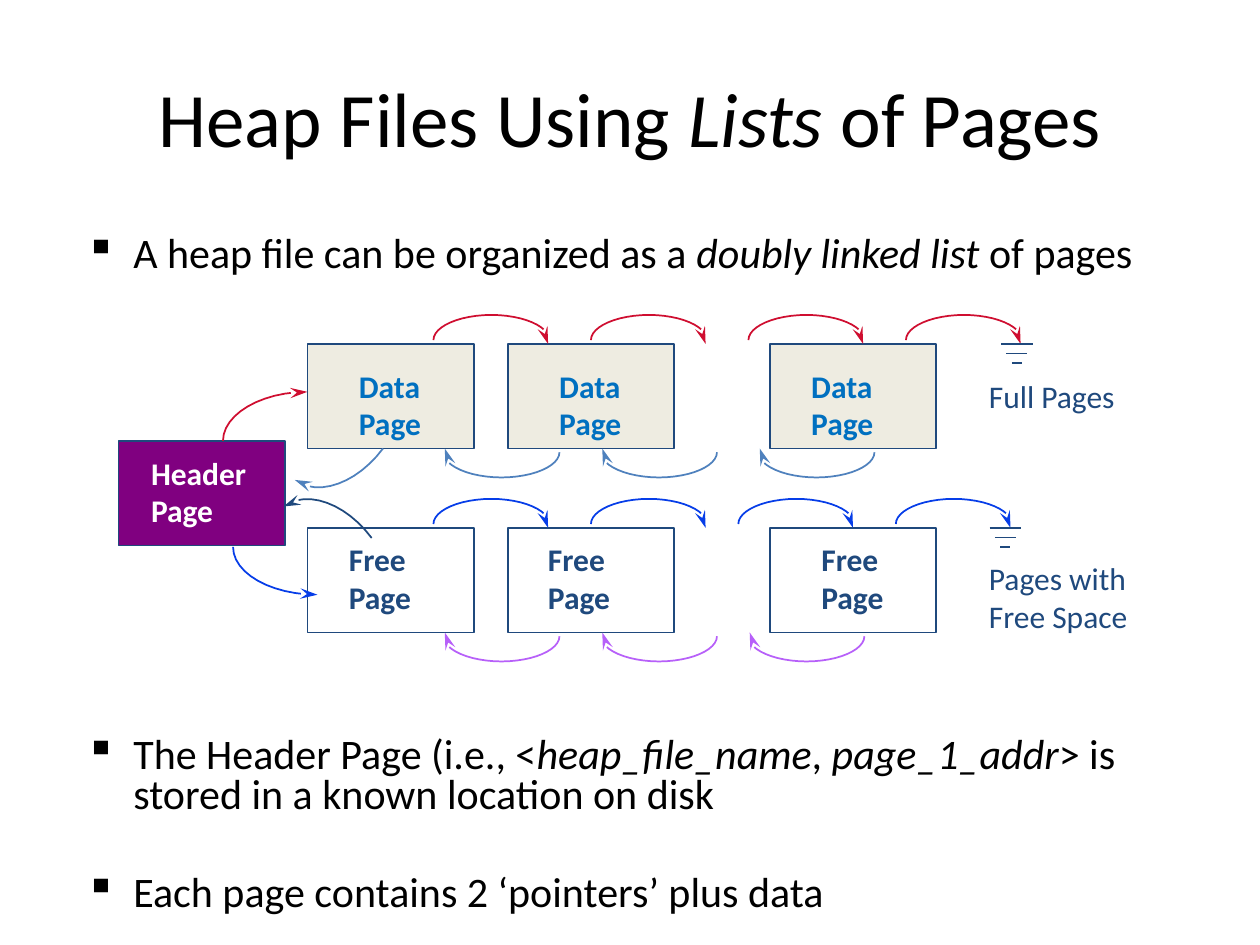
"""Build the slide on heap files kept as linked lists of pages."""
from dataclasses import dataclass

from lxml.etree import SubElement
from pptx import Presentation
from pptx.dml.color import RGBColor
from pptx.enum.shapes import MSO_CONNECTOR, MSO_SHAPE
from pptx.enum.text import MSO_ANCHOR, MSO_AUTO_SIZE, PP_ALIGN
from pptx.oxml.ns import qn
from pptx.util import Inches, Pt

BLACK = RGBColor(0x00, 0x00, 0x00)
WHITE = RGBColor(0xFF, 0xFF, 0xFF)
NAVY = RGBColor(0x1F, 0x49, 0x7D)
CREAM = RGBColor(0xEE, 0xEC, 0xE1)
PLUM = RGBColor(0x80, 0x00, 0x80)
SKY = RGBColor(0x00, 0x70, 0xC0)
STEEL = RGBColor(0x4F, 0x81, 0xBD)
RED = RGBColor(0xCF, 0x0E, 0x30)
BLUE = RGBColor(0x06, 0x3D, 0xE8)
LILAC = RGBColor(0xB7, 0x60, 0xF9)

Point = tuple[float, float]
WIDE, HIGH = 1.32, 0.83
COLS = (2.44, 4.03, 6.11)
STEPS = 12


@dataclass
class Row:
    top: float
    fill: RGBColor | None
    label: str
    ink: RGBColor
    text_xs: tuple[float, ...]
    text_dy: float
    text_size: Point
    next_xs: tuple[float, ...]
    next_ink: RGBColor
    back_xs: tuple[float, ...]
    back_ink: RGBColor
    end_x: float
    note: str
    note_dy: float
    note_size: Point


ROWS = (
    Row(2.73, CREAM, "Data\nPage", SKY, (2.75, 4.34, 6.34), 0.13, (0.7, 0.71),
        (3.44, 4.69, 5.94, 7.19), RED, (4.44, 5.69, 6.94), STEEL,
        8.07, "Full Pages", 0.21, (1.34, 0.37)),
    Row(4.19, None, "Free\nPage", NAVY, (2.67, 4.25, 6.42), 0.05, (0.72, 0.65),
        (3.44, 4.69, 5.86, 7.11), BLUE, (4.44, 5.69, 6.86), LILAC,
        7.98, "Pages with\nFree Space", 0.2, (1.41, 0.65)),
)

POINTS = (
    ("A heap file can be organized as a *doubly linked list *of pages", 0, 1.0),
    ("The Header Page (i.e., <*heap_file_name*, *page_1_addr*> is stored in "
     "a known location on disk", 263, 0.8),
    ("Each page contains 2 ‘pointers’ plus data", 33, 0.8),
)


def write(para, text: str, *, size: float, ink: RGBColor = BLACK,
          bold: bool = False, align=PP_ALIGN.LEFT) -> None:
    """Fill a paragraph; parts between asterisks become italic."""
    para.alignment = align
    for i, part in enumerate(text.split("*")):
        run = para.add_run()
        run.text = part
        font = run.font
        font.name, font.size = "Calibri", Pt(size)
        font.bold, font.italic = bold, i % 2 == 1
        font.color.rgb = ink


def place(shape, x: float, y: float, w: float, h: float) -> None:
    """Set the place and size of a shape in inches."""
    shape.left, shape.top = Inches(x), Inches(y)
    shape.width, shape.height = Inches(w), Inches(h)


def add_box(slide, x: float, y: float, w: float, h: float):
    """Add a text box measured in inches."""
    return slide.shapes.add_textbox(Inches(x), Inches(y), Inches(w), Inches(h))


def add_label(slide, text: str, x: float, y: float, size: Point,
              ink: RGBColor, bold: bool = True) -> None:
    """Add an unwrapped label with one paragraph per line."""
    frame = add_box(slide, x, y, *size).text_frame
    frame.word_wrap = False
    frame.auto_size = MSO_AUTO_SIZE.SHAPE_TO_FIT_TEXT
    for i, line in enumerate(text.split("\n")):
        para = frame.add_paragraph() if i else frame.paragraphs[0]
        write(para, line, size=18, ink=ink, bold=bold)


def add_page(slide, x: float, y: float, fill: RGBColor | None) -> None:
    """Add the rectangle of one page."""
    page = slide.shapes.add_shape(
        MSO_SHAPE.RECTANGLE, Inches(x), Inches(y), Inches(WIDE), Inches(HIGH))
    page.shadow.inherit = False
    page.line.color.rgb, page.line.width = NAVY, Pt(1)
    if fill is None:
        page.fill.background()
    else:
        page.fill.solid()
        page.fill.fore_color.rgb = fill


def bend(a: Point, b: Point, c: Point, d: Point) -> list[Point]:
    """Return points along a cubic curve from a to d."""
    found = []
    for i in range(STEPS + 1):
        t = i / STEPS
        u = 1 - t
        found.append(tuple(
            u**3 * p + 3 * u * u * t * q + 3 * u * t * t * r + t**3 * s
            for p, q, r, s in zip(a, b, c, d)))
    return found


def add_arrow(slide, points: list[Point], ink: RGBColor) -> None:
    """Draw an open curve that ends in an arrowhead."""
    first, *rest = [(Inches(x), Inches(y)) for x, y in points]
    pen = slide.shapes.build_freeform(*first)
    pen.add_line_segments(rest, close=False)
    curve = pen.convert_to_shape()
    curve.shadow.inherit = False
    curve.fill.background()
    curve.line.color.rgb, curve.line.width = ink, Pt(1)
    SubElement(curve.line._get_or_add_ln(), qn("a:tailEnd"),
               type="stealth", w="med", len="lg")


def add_hop(slide, x: float, y: float, side: int, ink: RGBColor) -> None:
    """Draw a link over (side 1) or back under (side -1) the pages."""
    def at(dx: float, dy: float) -> Point:
        return x + side * dx, y - side * dy

    rise = bend(at(0, 0), at(0, 0.11), at(0.21, 0.2), at(0.46, 0.2))
    fall = bend(at(0.46, 0.2), at(0.71, 0.2), at(0.92, 0.11), at(0.92, 0))
    add_arrow(slide, rise + fall[1:] + [at(0.91, -0.03)], ink)


def add_ground(slide, mid: float, top: float) -> None:
    """Draw the three bars that mark the end of a list."""
    for i, wide in enumerate((0.25, 0.17, 0.08)):
        y = Inches(top + i * 0.075)
        bar = slide.shapes.add_connector(
            MSO_CONNECTOR.STRAIGHT,
            Inches(mid - wide / 2), y, Inches(mid + wide / 2), y)
        bar.line.color.rgb, bar.line.width = NAVY, Pt(1)
        SubElement(bar._element.spPr, qn("a:effectLst"))


def add_row(slide, row: Row) -> None:
    """Draw one list of pages with its links and note."""
    for x, text_x in zip(COLS, row.text_xs):
        add_page(slide, x, row.top, row.fill)
        add_label(slide, row.label, text_x, row.top + row.text_dy,
                  row.text_size, row.ink)
    for x in row.next_xs:
        add_hop(slide, x, row.top - 0.03, 1, row.next_ink)
    for x in row.back_xs:
        add_hop(slide, x, row.top + HIGH + 0.03, -1, row.back_ink)
    add_ground(slide, row.end_x, row.top)
    add_label(slide, row.note, 7.75, row.top + row.note_dy, row.note_size,
              NAVY, bold=False)


def add_points(slide) -> None:
    """Add the bulleted text."""
    frame = add_box(slide, 0.58, 1.75, 9.25, 5.6).text_frame
    frame.word_wrap = True
    for i, (text, gap, pitch) in enumerate(POINTS):
        para = frame.add_paragraph() if i else frame.paragraphs[0]
        para.space_before, para.line_spacing = Pt(gap), pitch
        write(para, text, size=24)
        props = para._p.get_or_add_pPr()
        props.set("marL", str(Inches(0.38)))
        props.set("indent", str(-Inches(0.38)))
        SubElement(props, qn("a:buChar"), char="▪")


def main() -> None:
    """Build and save the slide."""
    deck = Presentation()
    deck.slide_width, deck.slide_height = Inches(10), Inches(7.5)
    slide = deck.slides.add_slide(deck.slide_layouts[5])
    title = slide.shapes.title
    place(title, 0.5, 0.3, 9, 1.25)
    title.text_frame.vertical_anchor = MSO_ANCHOR.MIDDLE
    write(title.text_frame.paragraphs[0], "Heap Files Using *Lists* of Pages",
          size=44, align=PP_ALIGN.CENTER)
    add_points(slide)
    for row in ROWS:
        add_row(slide, row)
    add_page(slide, 0.94, 3.5, PLUM)
    add_label(slide, "Header\nPage", 1.1, 3.55, (0.99, 0.65), WHITE)
    for ink, *curve in (
        (RED, (1.77, 3.5), (1.77, 3.29), (2.07, 3.11), (2.44, 3.11)),
        (STEEL, (3.04, 3.56), (2.84, 3.83), (2.53, 3.95), (2.34, 3.81)),
        (NAVY, (2.95, 4.27), (2.75, 4), (2.44, 3.88), (2.25, 4.02)),
        (BLUE, (1.85, 4.34), (1.85, 4.55), (2.15, 4.72), (2.52, 4.72)),
    ):
        add_arrow(slide, bend(*curve), ink)
    deck.save("out.pptx")


if __name__ == "__main__":
    main()
